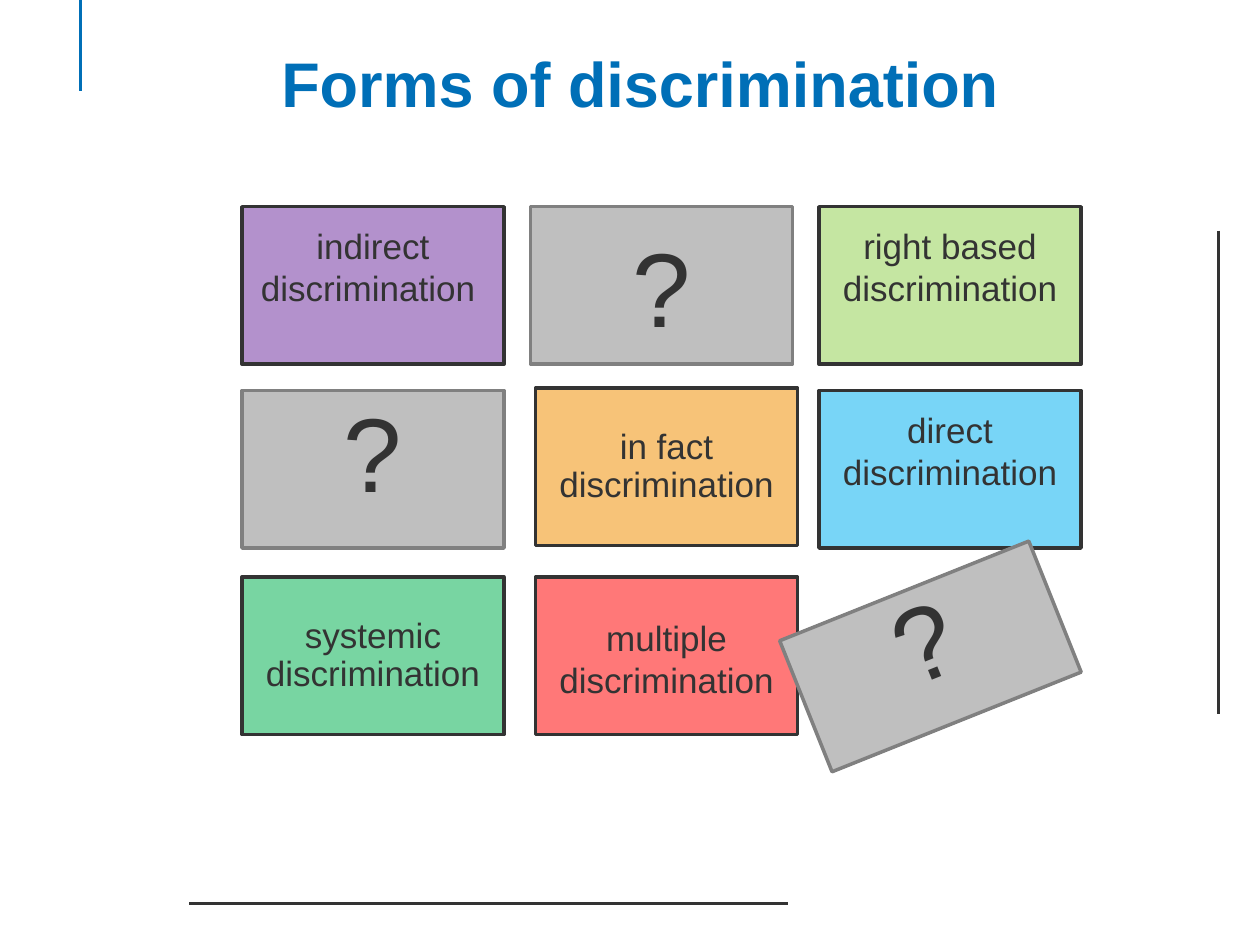
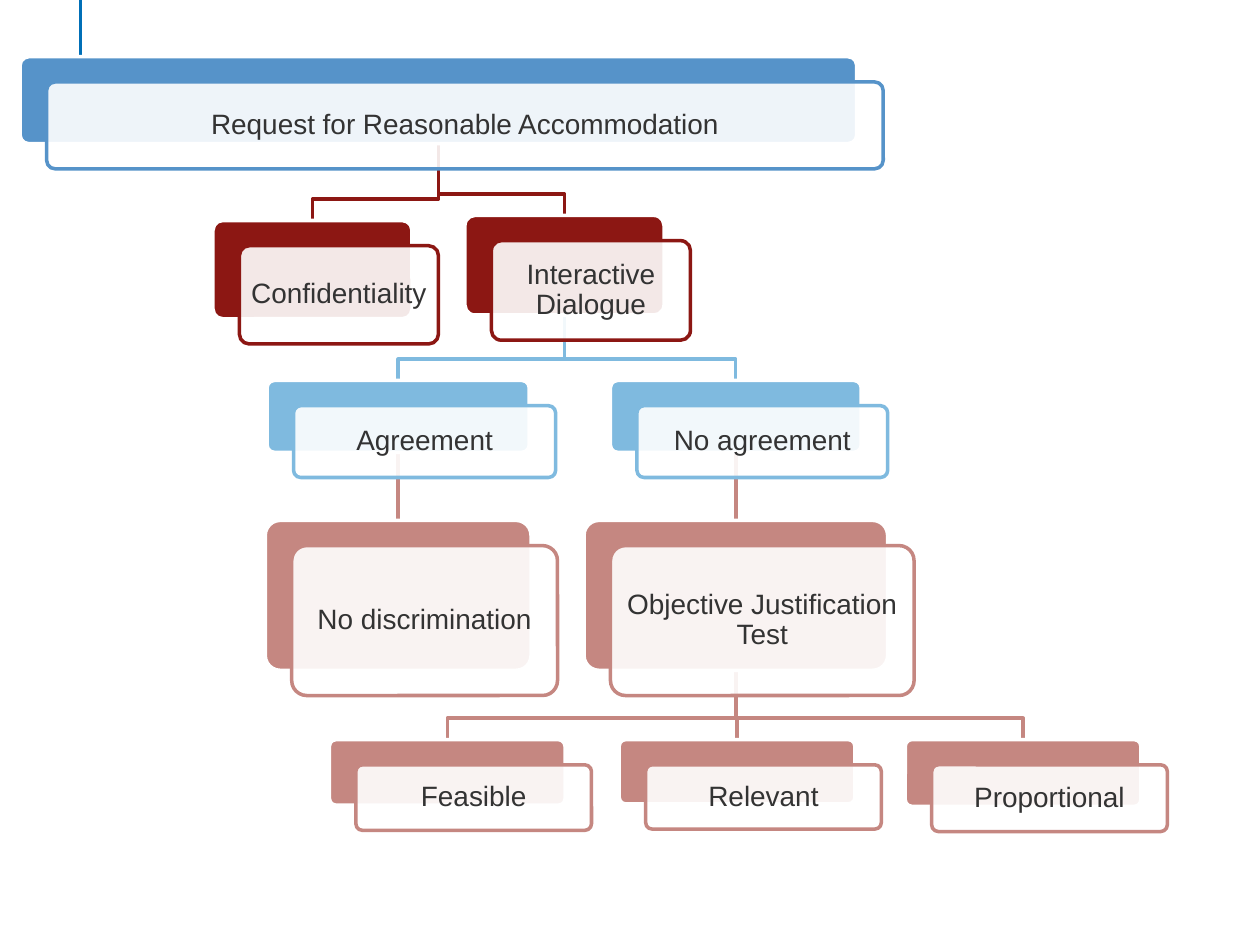
from dataclasses import dataclass

from lxml import etree
from pptx import Presentation
from pptx.dml.color import RGBColor
from pptx.enum.shapes import MSO_CONNECTOR, MSO_SHAPE
from pptx.enum.text import MSO_ANCHOR, PP_ALIGN
from pptx.oxml.ns import qn
from pptx.util import Inches, Pt

RECT, ROUNDED = MSO_SHAPE.RECTANGLE, MSO_SHAPE.ROUNDED_RECTANGLE
STRAIGHT = MSO_CONNECTOR.STRAIGHT
CENTER = PP_ALIGN.CENTER
TOP, MIDDLE = MSO_ANCHOR.TOP, MSO_ANCHOR.MIDDLE
TITLE_ONLY, BLANK = 5, 6
BOTTOM_SIDE, TOP_SIDE = 2, 0


# Theme
@dataclass(frozen=True)
class Theme:
    font: str = "Arial"
    accent: str = "006FB7"
    ink: str = "333333"
    white: str = "FFFFFF"
    hidden_fill: str = "BFBFBF"
    hidden_line: str = "808080"
    request: str = "5693C9"
    process: str = "8C1713"
    outcome: str = "7FBADF"
    test: str = "C58781"
    title_size: int = 36
    card_size: int = 20
    mark_size: int = 60
    node_size: int = 16
    line_width: int = 2


THEME = Theme()


# Forms of discrimination: a grid of three columns and three rows
COLS = (1.92, 4.21, 6.5)
ROWS = (1.64, 3.1, 4.58)
CARD_W, CARD_H = 2.08, 1.25


@dataclass(frozen=True)
class Card:
    text: str
    col: int
    row: int
    fill: str
    top_inset: float = 0.08
    bottom_inset: float = 0.08
    spacing: float = 1.0
    dx: float = 0
    dy: float = 0
    dw: float = 0
    dh: float = 0
    rotation: float = 0


RAISED = 0.38
CARDS = (
    Card("multiple discrimination", 1, 2, "FF0000", top_inset=0.12, dx=0.04),
    Card("indirect discrimination ", 0, 0, "7030A0", bottom_inset=RAISED),
    Card("?", 1, 0, THEME.hidden_fill),
    Card("right based discrimination", 2, 0, "92D050", bottom_inset=RAISED),
    Card("?", 0, 1, THEME.hidden_fill, top_inset=0, bottom_inset=0.3),
    Card("in fact discrimination", 1, 1, "F18E00", spacing=0.9, dx=0.04, dy=-0.02),
    Card("direct discrimination", 2, 1, "00B0F0", bottom_inset=RAISED),
    Card("systemic discrimination", 0, 2, "00B050", spacing=0.9),
    Card("?", 2, 2, THEME.hidden_fill, top_inset=0, bottom_inset=0.3,
         dx=-0.18, dy=0.07, dw=0.05, dh=-0.13, rotation=338.2),
)


# Accommodation chart: each node hangs below its parent
@dataclass(frozen=True)
class Node:
    text: str
    center: float
    top: float
    width: float
    height: float
    color: str
    parent: str = ""

    @property
    def left(self) -> float:
        return self.center - self.width / 2

    @property
    def bottom(self) -> float:
        return self.top + self.height


REQUEST = "Request for Reasonable Accommodation"
DIALOGUE = "Interactive Dialogue"
JUSTIFICATION = "Objective Justification Test"
PLATE_DX, PLATE_DY = 0.21, 0.2
ELBOW_RISE = 0.17
NODES = (
    Node(REQUEST, 3.48, 0.45, 6.64, 0.69, THEME.request),
    Node("Confidentiality", 2.48, 1.75, 1.58, 0.78, THEME.process, REQUEST),
    Node(DIALOGUE, 4.48, 1.71, 1.58, 0.79, THEME.process, REQUEST),
    Node("Agreement", 3.16, 3.02, 2.08, 0.57, THEME.outcome, DIALOGUE),
    Node("No discrimination", 3.16, 4.13, 2.11, 1.19, THEME.test, "Agreement"),
    Node("No agreement", 5.84, 3.02, 1.99, 0.57, THEME.outcome, DIALOGUE),
    Node(JUSTIFICATION, 5.84, 4.13, 2.41, 1.19, THEME.test, "No agreement"),
    Node("Feasible", 3.55, 5.87, 1.87, 0.52, THEME.test, JUSTIFICATION),
    Node("Relevant", 5.85, 5.87, 1.87, 0.51, THEME.test, JUSTIFICATION),
    Node("Proportional", 8.12, 5.87, 1.87, 0.53, THEME.test, JUSTIFICATION),
)


# Shared drawing functions
def rgb(color: str) -> RGBColor:
    return RGBColor.from_string(color)


def set_all(target, values: dict) -> None:
    for name, value in values.items():
        setattr(target, name, value)


def style_line(sp, color: str) -> None:
    sp.line.color.rgb = rgb(color)
    sp.line.width = Pt(THEME.line_width)


def add_box(slide, kind, box: tuple, fill: str, line: str, alpha: int = 100):
    sp = slide.shapes.add_shape(kind, *map(Inches, box))
    sp.shadow.inherit = False
    sp.fill.solid()
    sp.fill.fore_color.rgb = rgb(fill)
    if alpha < 100:
        clr = sp._element.spPr.find(qn("a:solidFill"))[0]
        etree.SubElement(clr, qn("a:alpha"), val=str(alpha * 1000))
    style_line(sp, line)
    return sp


def write(sp, text: str, size: int, color: str = THEME.ink, bold: bool = False,
          spacing: float = 1.0, anchor=MIDDLE, insets: tuple = (0.1, 0.05, 0.1, 0.05)) -> None:
    tf = sp.text_frame
    sides = ("margin_left", "margin_top", "margin_right", "margin_bottom")
    set_all(tf, dict(zip(sides, map(Inches, insets)), word_wrap=True, vertical_anchor=anchor))
    p = tf.paragraphs[0]
    set_all(p, {"alignment": CENTER, "line_spacing": spacing})
    r = p.add_run()
    r.text = text
    set_all(r.font, {"name": THEME.font, "size": Pt(size), "bold": bold})
    r.font.color.rgb = rgb(color)


def add_line(slide, start: tuple, end: tuple, color: str):
    sp = slide.shapes.add_connector(STRAIGHT, *map(Inches, start + end))
    style_line(sp, color)
    etree.SubElement(sp._element.spPr, qn("a:effectLst"))
    return sp


def add_elbow(slide, points: list, color: str):
    start, *rest = [tuple(map(Inches, point)) for point in points]
    fb = slide.shapes.build_freeform(*start)
    fb.add_line_segments(rest, close=False)
    sp = fb.convert_to_shape()
    sp.shadow.inherit = False
    sp.fill.background()
    style_line(sp, color)
    return sp


def add_slide(prs, layout: int):
    slide = prs.slides.add_slide(prs.slide_layouts[layout])
    add_line(slide, (0.64, 0), (0.64, 0.72), THEME.accent)
    return slide


# Slide 1
def draw_card(slide, card: Card) -> None:
    hidden = card.text == "?"
    box = (COLS[card.col] + card.dx, ROWS[card.row] + card.dy,
           CARD_W + card.dw, CARD_H + card.dh)
    line = THEME.hidden_line if hidden else THEME.ink
    sp = add_box(slide, RECT, box, card.fill, line, 100 if hidden else 53)
    sp.rotation = card.rotation
    write(sp, card.text, THEME.mark_size if hidden else THEME.card_size,
          spacing=card.spacing, insets=(0.08, card.top_inset, 0.08, card.bottom_inset))


def build_forms(prs) -> None:
    slide = add_slide(prs, TITLE_ONLY)
    title = slide.shapes.title
    place = (0.49, 0.3, 9.18, 1.19)
    set_all(title, dict(zip(("left", "top", "width", "height"), map(Inches, place))))
    write(title, "Forms of discrimination", THEME.title_size, THEME.accent,
          bold=True, anchor=TOP)
    add_line(slide, (9.67, 1.83), (9.67, 5.67), THEME.ink)
    add_line(slide, (6.25, 7.17), (1.5, 7.17), THEME.ink)
    for card in CARDS:
        draw_card(slide, card)


# Slide 2
def draw_node(slide, node: Node):
    box = (node.left, node.top, node.width, node.height)
    shifted = (node.left + PLATE_DX, node.top + PLATE_DY, node.width, node.height)
    back = add_box(slide, ROUNDED, box, node.color, THEME.white)
    front = add_box(slide, ROUNDED, shifted, THEME.white, node.color, 90)
    for sp in (back, front):
        sp.adjustments[0] = 0.1
    write(front, node.text, THEME.node_size, spacing=0.9, insets=(0.05,) * 4)
    return back


def draw_link(slide, parent: Node, child: Node, plates: dict) -> None:
    start, end = (parent.center, parent.bottom), (child.center, child.top)
    if parent.center == child.center:
        sp = add_line(slide, start, end, child.color)
        sp.begin_connect(plates[parent.text], BOTTOM_SIDE)
        sp.end_connect(plates[child.text], TOP_SIDE)
    else:
        bend = child.top - ELBOW_RISE
        points = [start, (parent.center, bend), (child.center, bend), end]
        sp = add_elbow(slide, points, child.color)
    slide.shapes._spTree.insert(2, sp._element)  # links lie behind the plates


def build_accommodation(prs) -> None:
    slide = add_slide(prs, BLANK)
    nodes = {node.text: node for node in NODES}
    plates = {node.text: draw_node(slide, node) for node in NODES}
    for node in NODES:
        if node.parent:
            draw_link(slide, nodes[node.parent], node, plates)


def main() -> None:
    prs = Presentation()
    set_all(prs, {"slide_width": Inches(10), "slide_height": Inches(7.5)})
    build_forms(prs)
    build_accommodation(prs)
    prs.save("out.pptx")


if __name__ == "__main__":
    main()
